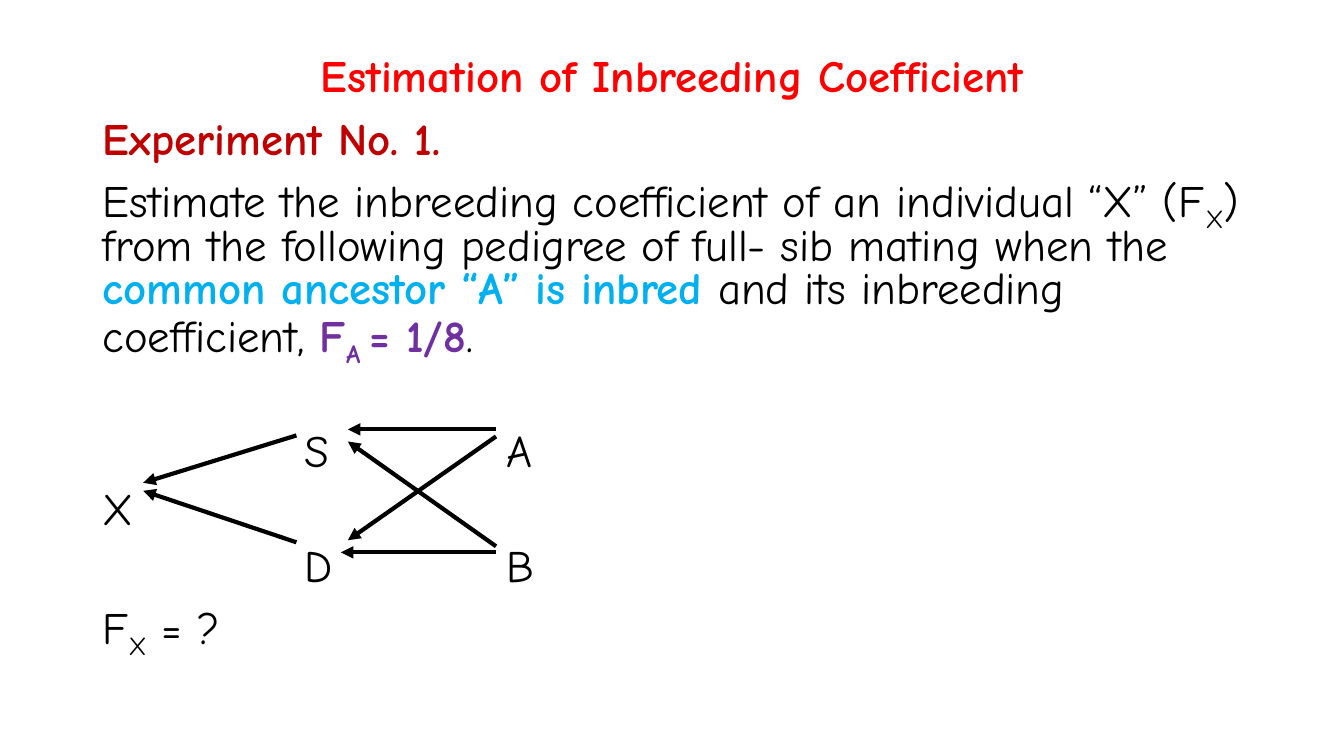
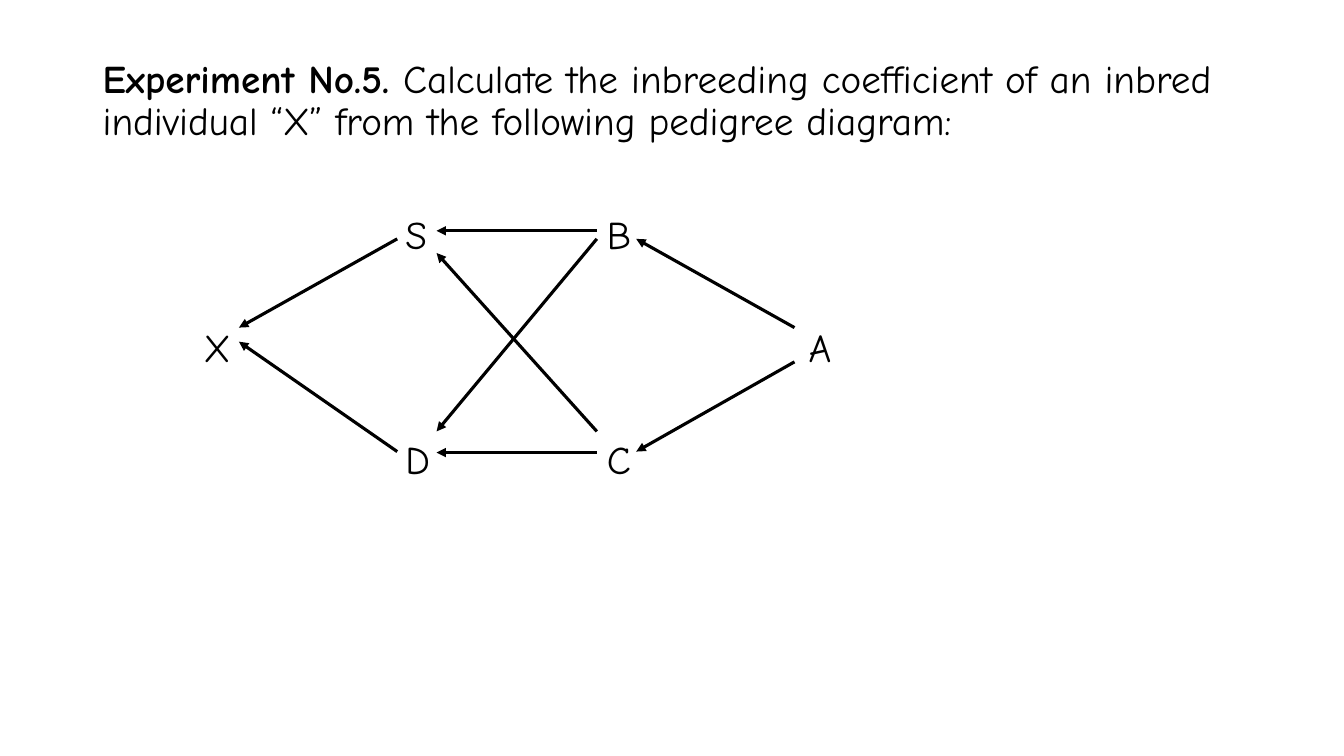
from lxml import etree
from pptx import Presentation
from pptx import util as u
from pptx.dml.color import RGBColor
from pptx.enum import shapes, text
from pptx.oxml.ns import qn

COLORS = {
    "black": "000000",
    "white": "FFFFFF",
    "title": "FF0000",
    "heading": "C00000",
    "ancestor": "00B0F0",
    "value": "7030A0",
}
FONT = "Comic Neue"
BODY_LEFT, BODY_WIDTH = 0.92, 11.5
NODE_LEFT = 1.02     # left edge of the text; generations stand on a 1 inch grid
CAP_CENTER = 0.66    # from the top of a line to mid capital height, in ems


def rgb(name):
    return RGBColor.from_string(COLORS[name])


def add_run(paragraph, content, size, color="black", bold=False, sub=False):
    run = paragraph.add_run()
    run.text = content
    run.font.name = FONT
    run.font.size = u.Pt(size)
    run.font.bold = bold
    run.font.color.rgb = rgb(color)
    if sub:
        run.font._element.set("baseline", "-25000")


def add_text(slide, box, paragraphs, size, spacing=1.0, margin=True,
             align=text.PP_ALIGN.LEFT, anchor=text.MSO_ANCHOR.TOP):
    """Each paragraph is a list of (text, run format) pairs."""
    shape = slide.shapes.add_textbox(*map(u.Inches, box))
    frame = shape.text_frame
    frame.word_wrap = True
    frame.vertical_anchor = anchor
    if not margin:
        frame.margin_left = frame.margin_right = 0
        frame.margin_top = frame.margin_bottom = 0
    for index, runs in enumerate(paragraphs):
        paragraph = frame.add_paragraph() if index else frame.paragraphs[0]
        paragraph.alignment = align
        paragraph.line_spacing = spacing
        if index:
            paragraph.space_before = u.Pt(10)
        for content, style in runs:
            add_run(paragraph, content, size, **style)


def add_label(slide, column, center, runs, size, width=0.4):
    """Place one line with its capitals centred on a height."""
    em = size / 72
    box = (NODE_LEFT + column, center - CAP_CENTER * em, width, 1.2 * em)
    add_text(slide, box, [runs], size, margin=False)


def add_arrow(slide, start, end, width):
    connector = slide.shapes.add_connector(
        shapes.MSO_CONNECTOR.STRAIGHT, *map(u.Inches, start + end))
    connector.line.width = u.Pt(width)
    connector.line.color.rgb = rgb("black")
    etree.SubElement(connector.line._get_or_add_ln(), qn("a:tailEnd"), type="triangle")
    etree.SubElement(connector._element.spPr, qn("a:effectLst"))


def add_pedigree(slide, nodes, arrows, size, width):
    """Nodes map a letter to (column, height); arrows run from parent to offspring."""
    for letter, (column, center) in nodes.items():
        add_label(slide, column, center, [(letter, {})], size)
    for start, end in arrows:
        add_arrow(slide, start, end, width)


def add_blank_slide(presentation):
    slide = presentation.slides.add_slide(presentation.slide_layouts[6])
    slide.background.fill.solid()
    slide.background.fill.fore_color.rgb = rgb("white")
    return slide


def build_full_sib_slide(presentation):
    slide = add_blank_slide(presentation)
    size = 32
    add_text(slide, (BODY_LEFT, 0.4, BODY_WIDTH, 0.75),
             [[("Estimation of Inbreeding Coefficient", {"color": "title", "bold": True})]],
             size, spacing=0.9, align=text.PP_ALIGN.CENTER, anchor=text.MSO_ANCHOR.MIDDLE)
    value = {"color": "value", "bold": True}
    add_text(slide, (BODY_LEFT, 1.15, BODY_WIDTH, 2.6), [
        [("Experiment No. 1.", {"color": "heading", "bold": True})],
        [("Estimate the inbreeding coefficient of an individual “X” (F", {}),
         ("X", {"sub": True}),
         (") from the following pedigree of full- sib mating when the ", {}),
         ("common ancestor “A” is inbred", {"color": "ancestor", "bold": True}),
         (" and its inbreeding coefficient, ", {}),
         ("F", value), ("A ", {**value, "sub": True}), ("= 1/8", value), (".", {})],
    ], size, spacing=0.8)

    top, middle, bottom = (4.49 + 0.57 * row for row in range(3))
    nodes = {"S": (2, top), "A": (4, top), "X": (0, middle),
             "D": (2, bottom), "B": (4, bottom)}
    arrows = [
        ((4.92, 4.26), (3.45, 4.26)),
        ((4.92, 5.48), (3.38, 5.48)),
        ((2.94, 4.32), (1.42, 4.79)),
        ((2.94, 5.38), (1.42, 4.87)),
        ((4.92, 5.42), (3.45, 4.38)),
        ((4.92, 4.33), (3.45, 5.36)),
    ]
    add_pedigree(slide, nodes, arrows, size, width=3)
    add_label(slide, 0, 6.24, [("F", {}), ("X", {"sub": True}), (" = ?", {})],
              size, width=2)


def build_double_ancestor_slide(presentation):
    slide = add_blank_slide(presentation)
    size = 28
    add_text(slide, (BODY_LEFT, 0.54, BODY_WIDTH, 1), [
        [("Experiment No.5. ", {"bold": True}),
         ("Calculate the inbreeding coefficient of an inbred individual “X” "
          "from the following pedigree diagram:", {})],
    ], size, spacing=0.9)

    top, middle, bottom = (2.34 + 1.12 * row for row in range(3))
    nodes = {"S": (3, top), "B": (5, top), "X": (1, middle), "A": (7, middle),
             "D": (3, bottom), "C": (5, bottom)}
    arrows = [
        ((3.94, 2.37), (2.37, 3.25)),
        ((3.94, 4.48), (2.37, 3.39)),
        ((7.88, 3.25), (6.31, 2.37)),
        ((7.88, 3.59), (6.31, 4.48)),
        ((5.92, 2.29), (4.33, 2.29)),
        ((5.92, 4.49), (4.33, 4.49)),
        ((5.92, 2.37), (4.33, 4.28)),
        ((5.92, 4.28), (4.33, 2.51)),
    ]
    add_pedigree(slide, nodes, arrows, size, width=2.25)


def main():
    presentation = Presentation()
    presentation.slide_width = u.Inches(13.33)
    presentation.slide_height = u.Inches(7.5)
    build_full_sib_slide(presentation)
    build_double_ancestor_slide(presentation)
    presentation.save("out.pptx")


if __name__ == "__main__":
    main()
